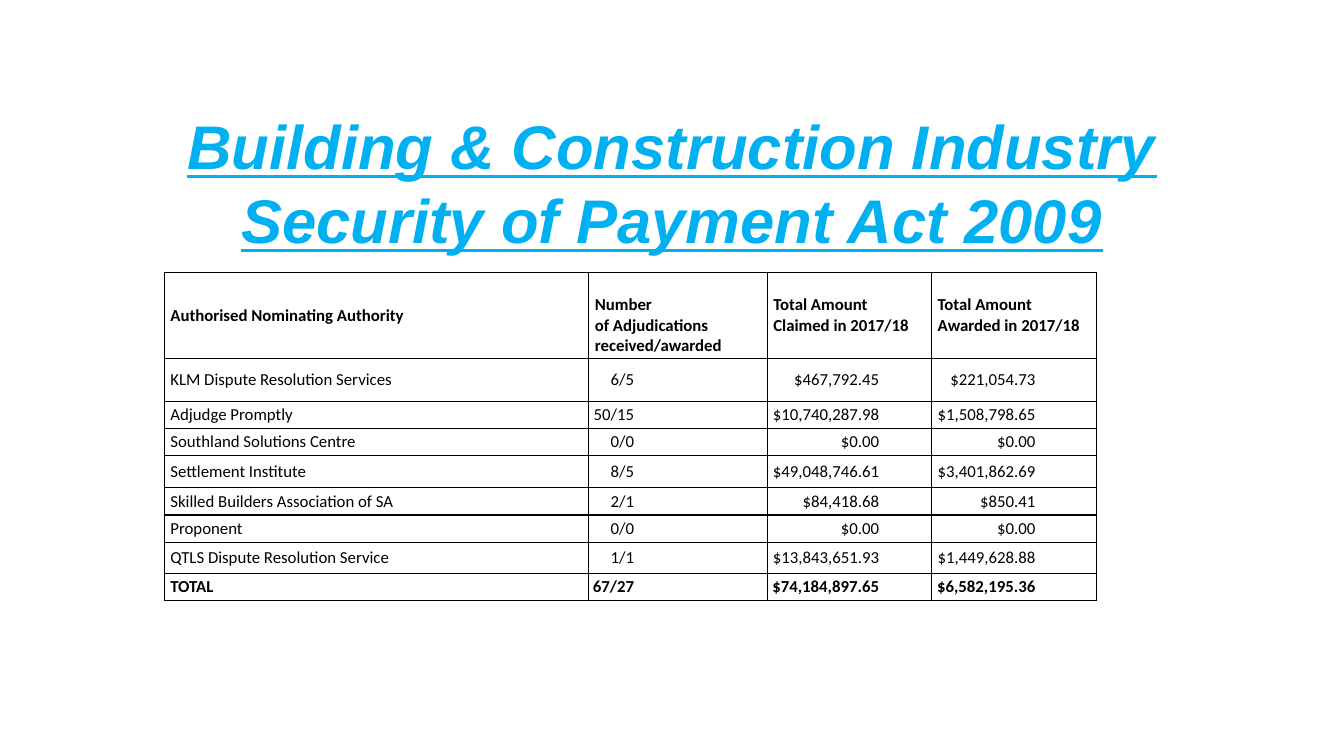
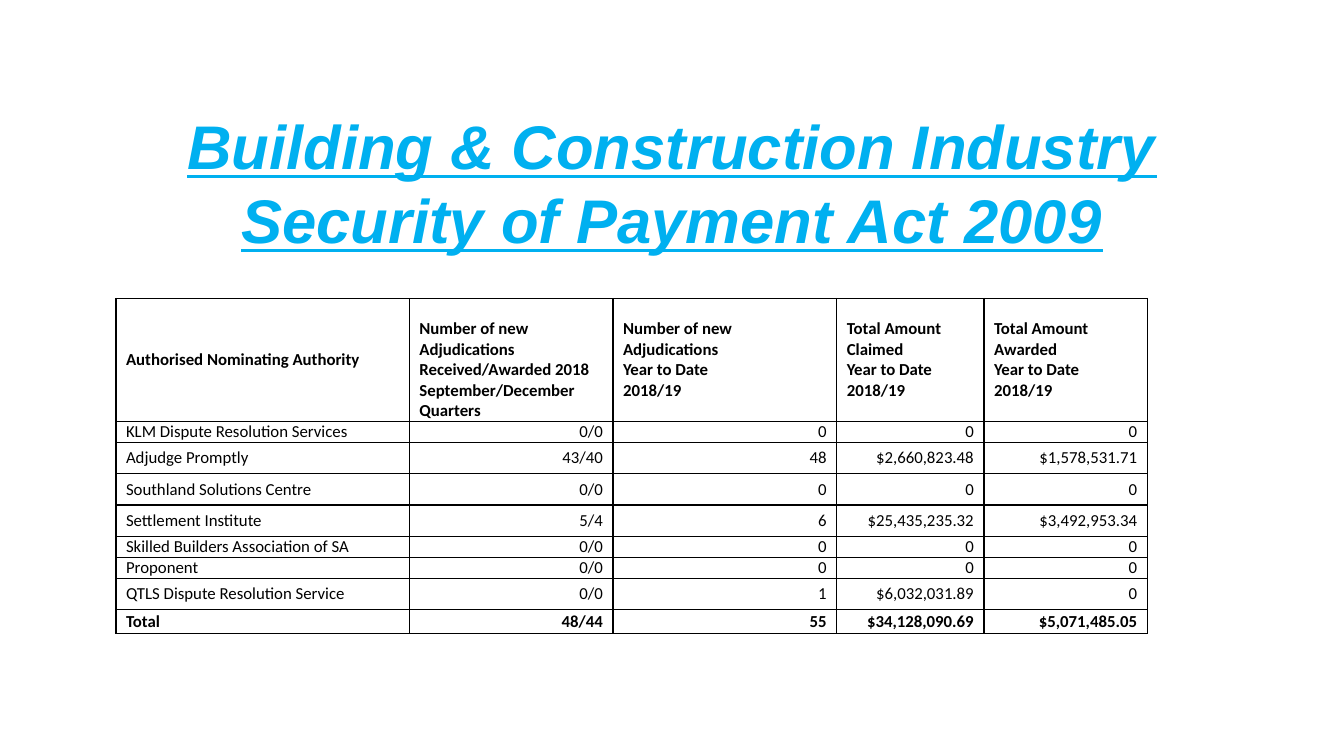
"""Build two slides of adjudication figures under the Security of Payment Act."""
import pptx
import pptx.dml.color
import pptx.enum.shapes
import pptx.enum.text
import pptx.oxml
import pptx.oxml.ns
import pptx.util

Inches = pptx.util.Inches
Pt = pptx.util.Pt
ALIGN = pptx.enum.text.PP_ALIGN
MIDDLE = pptx.enum.text.MSO_ANCHOR.MIDDLE
RECTANGLE = pptx.enum.shapes.MSO_SHAPE.RECTANGLE
BLACK = pptx.dml.color.RGBColor(0x00, 0x00, 0x00)
WHITE = pptx.dml.color.RGBColor(0xFF, 0xFF, 0xFF)
SKY_BLUE = pptx.dml.color.RGBColor(0x00, 0xB0, 0xF0)

TITLE = "Building & Construction Industry Security of Payment Act 2009"
BORDER = (
    '<a:{side} {namespace} w="12700"><a:solidFill><a:srgbClr val="{color}"/>'
    "</a:solidFill></a:{side}>"
)
AUTHORITIES = [
    "KLM Dispute Resolution Services",
    "Adjudge Promptly",
    "Southland Solutions Centre",
    "Settlement Institute",
    "Skilled Builders Association of SA",
    "Proponent",
    "QTLS Dispute Resolution Service",
]

TABLES = [
    {
        "position": (1.63, 2.7),
        "columns": [4.21, 1.77, 1.63, 1.64],
        "rows": [0.86, 0.42, 0.27, 0.27, 0.32, 0.27, 0.27, 0.31, 0.27],
        "side_margin": 0.06,
        "end_margin": 0.02,
        "number_margins": [1.32, 0.52, 0.61],
        "header": [
            "Authorised Nominating Authority",
            "Number\nof Adjudications\nreceived/awarded",
            "Total Amount Claimed in 2017/18",
            "Total Amount Awarded in 2017/18",
        ],
        "total": "TOTAL",
        "figures": [
            ["6/5", "$467,792.45", "$221,054.73"],
            ["50/15", "$10,740,287.98", "$1,508,798.65"],
            ["0/0", "$0.00", "$0.00"],
            ["8/5", "$49,048,746.61", "$3,401,862.69"],
            ["2/1", "$84,418.68", "$850.41"],
            ["0/0", "$0.00", "$0.00"],
            ["1/1", "$13,843,651.93", "$1,449,628.88"],
            ["67/27", "$74,184,897.65", "$6,582,195.36"],
        ],
    },
    {
        "position": (1.15, 2.96),
        "columns": [2.91, 2.02, 2.22, 1.46, 1.62],
        "rows": [1.22, 0.21, 0.31, 0.31, 0.31, 0.21, 0.21, 0.31, 0.24],
        "side_margin": 0.1,
        "end_margin": 0,
        "number_margins": [0.1, 0.1, 0.1, 0.1],
        "header": [
            "Authorised Nominating Authority",
            "Number of new Adjudications Received/Awarded 2018 "
            "September/December Quarters",
            "Number of new Adjudications\nYear to Date\n2018/19",
            "Total Amount Claimed\nYear to Date 2018/19",
            "Total Amount Awarded\nYear to Date 2018/19",
        ],
        "total": "Total",
        "figures": [
            ["0/0", "0", "0", "0"],
            ["43/40", "48", "$2,660,823.48", "$1,578,531.71"],
            ["0/0", "0", "0", "0"],
            ["5/4", "6", "$25,435,235.32", "$3,492,953.34"],
            ["0/0", "0", "0", "0"],
            ["0/0", "0", "0", "0"],
            ["0/0", "1", "$6,032,031.89", "0"],
            ["48/44", "55", "$34,128,090.69", "$5,071,485.05"],
        ],
    },
]


def write_text(frame, text, font="Calibri", size=12, color=BLACK, bold=False,
               italic=False, underline=False, align=ALIGN.LEFT):
    """Fill a text frame, one paragraph per line of text."""
    frame.word_wrap = True
    frame.text = text
    for paragraph in frame.paragraphs:
        paragraph.alignment = align
        for run in paragraph.runs:
            run.font.name = font
            run.font.size = Pt(size)
            run.font.color.rgb = color
            run.font.bold = bold
            run.font.italic = italic
            run.font.underline = underline


def outline_cell(cell):
    """Draw a thin black border round a cell and clear its fill."""
    properties = cell._tc.get_or_add_tcPr()
    for side in ("lnL", "lnR", "lnT", "lnB"):
        properties.append(pptx.oxml.parse_xml(BORDER.format(
            side=side, namespace=pptx.oxml.ns.nsdecls("a"), color=BLACK)))
    cell.fill.background()


presentation = pptx.Presentation()
presentation.slide_width = Inches(13.33)
presentation.slide_height = Inches(7.5)

for details in TABLES:
    slide = presentation.slides.add_slide(presentation.slide_layouts[6])

    corner_panel = slide.shapes.add_shape(
        RECTANGLE, Inches(10.76), Inches(0.02), Inches(2.56), Inches(1.57))
    corner_panel.shadow.inherit = False
    corner_panel.fill.solid()
    corner_panel.fill.fore_color.rgb = WHITE
    corner_panel.line.color.rgb = WHITE
    corner_panel.line.width = Pt(2)

    columns, rows = details["columns"], details["rows"]
    left, top = details["position"]
    table = slide.shapes.add_table(
        len(rows), len(columns), Inches(left), Inches(top),
        Inches(sum(columns)), Inches(sum(rows))).table
    for column, width in zip(table.columns, columns):
        column.width = Inches(width)
    for row, height in zip(table.rows, rows):
        row.height = Inches(height)

    names = AUTHORITIES + [details["total"]]
    body = [[name] + values for name, values in zip(names, details["figures"])]
    for row_index, values in enumerate([details["header"]] + body):
        for column_index, value in enumerate(values):
            cell = table.cell(row_index, column_index)
            is_number = row_index > 0 and column_index > 0
            outline_cell(cell)
            cell.vertical_anchor = MIDDLE
            cell.margin_left = cell.margin_right = Inches(details["side_margin"])
            cell.margin_top = cell.margin_bottom = Inches(details["end_margin"])
            if is_number:
                cell.margin_left = 0
                cell.margin_right = Inches(details["number_margins"][column_index - 1])
            write_text(cell.text_frame, value,
                       bold=row_index in (0, len(rows) - 1),
                       align=ALIGN.RIGHT if is_number else ALIGN.LEFT)
    table.cell(0, 1).margin_top = Inches(details["end_margin"] + 0.2)

    title = slide.shapes.add_textbox(
        Inches(1), Inches(1), Inches(11.33), Inches(1.61))
    title.text_frame.vertical_anchor = MIDDLE
    write_text(title.text_frame, TITLE, font="Arial", size=44, color=SKY_BLUE,
               bold=True, italic=True, underline=True, align=ALIGN.CENTER)

presentation.save("out.pptx")
